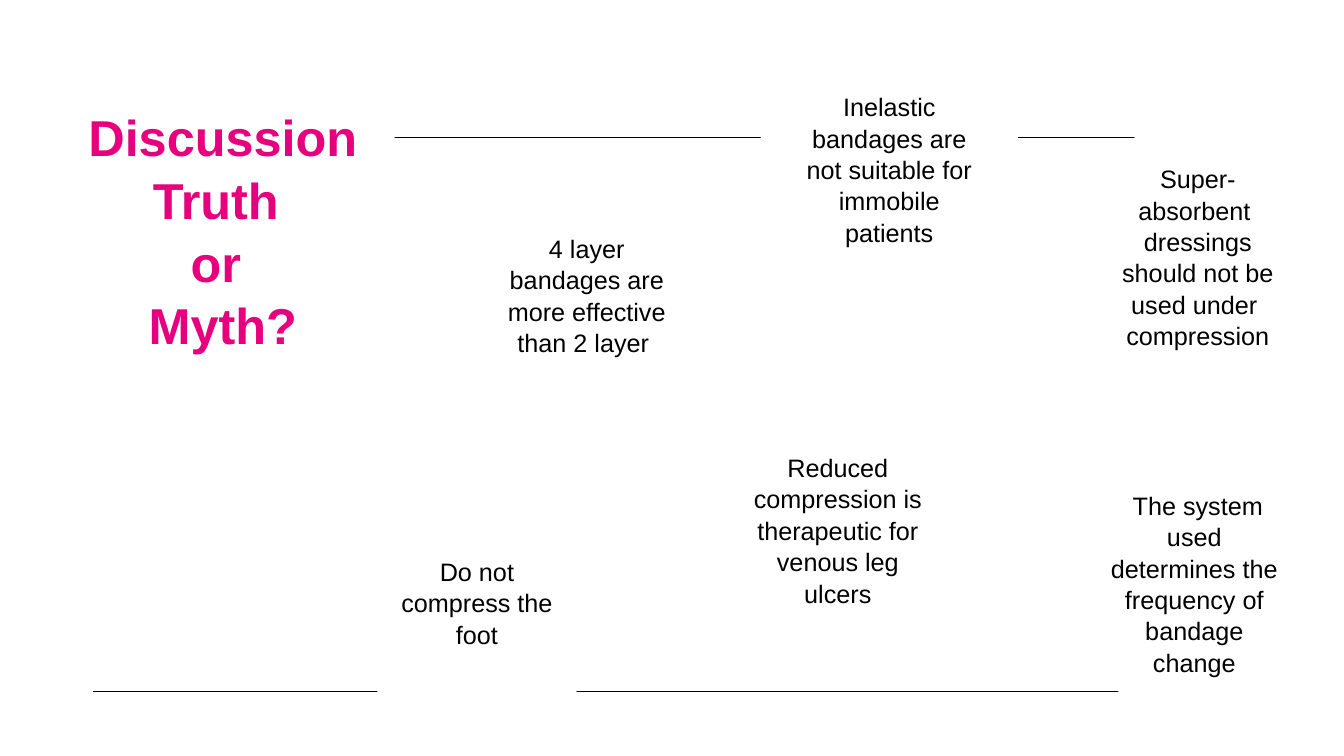
from pptx import Presentation
from pptx.dml.color import RGBColor
from pptx.enum.shapes import MSO_CONNECTOR, MSO_SHAPE
from pptx.enum.text import MSO_ANCHOR, MSO_AUTO_SIZE, PP_ALIGN
from pptx.oxml.ns import qn
from pptx.util import Inches, Pt
from lxml import etree

STRAIGHT = MSO_CONNECTOR.STRAIGHT
OVAL = MSO_SHAPE.OVAL
MIDDLE = MSO_ANCHOR.MIDDLE
CENTER = PP_ALIGN.CENTER
NO_AUTOFIT = MSO_AUTO_SIZE.NONE


def color(hex_string):
    return RGBColor.from_string(hex_string)


class SlideBuilder:
    font = "Arial"
    ink, accent, paper = "000000", "E6007E", "FFFFFF"
    line_spacing = 1.04

    def __init__(self, slide):
        self.slide = slide

    def rule(self, left, right, y):
        connector = self.slide.shapes.add_connector(
            STRAIGHT, Inches(left), Inches(y), Inches(right), Inches(y))
        connector.line.color.rgb = color(self.ink)
        connector.line.width = Pt(0.5)
        etree.SubElement(connector._element.spPr, qn("a:effectLst"))

    def circle(self, left, top, width, height):
        shape = self.slide.shapes.add_shape(
            OVAL, Inches(left), Inches(top), Inches(width), Inches(height))
        shape.shadow.inherit = False
        shape.fill.solid()
        shape.fill.fore_color.rgb = color(self.paper)
        shape.line.fill.background()
        return shape

    def set_text(self, shape, paragraphs, size, hex_string, bold=False):
        """Each paragraph is a list of lines separated by line breaks."""
        frame = shape.text_frame
        frame.word_wrap = True
        frame.auto_size = NO_AUTOFIT
        frame.vertical_anchor = MIDDLE
        frame.margin_left = frame.margin_right = 0
        frame.margin_top = frame.margin_bottom = 0
        for index, lines in enumerate(paragraphs):
            paragraph = frame.add_paragraph() if index else frame.paragraphs[0]
            paragraph.alignment = CENTER
            paragraph.line_spacing = self.line_spacing
            for number, line in enumerate(lines):
                if number:
                    paragraph.add_line_break()
                run = paragraph.add_run()
                run.text = line
                run.font.name = self.font
                run.font.size = Pt(size)
                run.font.bold = bold
                run.font.color.rgb = color(hex_string)

    def title(self, left, top, width, height, paragraphs):
        title = self.slide.shapes.title
        title.left, title.top = Inches(left), Inches(top)
        title.width, title.height = Inches(width), Inches(height)
        # Keep the title in front of its circle
        self.slide.shapes._spTree.append(title._element)
        self.set_text(title, paragraphs, 36, self.accent, bold=True)

    def statement(self, left, top, lines):
        self.set_text(self.circle(left, top, 2.62, 2.69), [lines], 18, self.ink)


def main():
    presentation = Presentation()
    presentation.slide_width = Inches(13.33)
    presentation.slide_height = Inches(7.5)
    builder = SlideBuilder(
        presentation.slides.add_slide(presentation.slide_layouts[5]))

    # Horizontal rules, interrupted by the white circles
    for y in (6.86, 1.36):
        builder.rule(0.92, 12.42, y)

    # Title in the large circle
    builder.circle(0.29, 0.3, 3.84, 3.95)
    builder.title(0.85, 0.88, 2.72, 2.79,
                  [["Discussion Truth "], ["or "], ["Myth?"]])

    # Statements to discuss
    statements = [
        (10.57, 4.44, ["The system used ", "determines the ",
                       "frequency of ", "bandage ", "change "]),
        (10.57, 1.2, ["Super-absorbent ",
                      "dressings should not be used under ",
                      "compression"]),
        (7.51, 0.33, ["Inelastic bandages are not suitable for "
                      "immobile patients"]),
        (7, 3.91, ["Reduced compression is therapeutic for "
                   "venous leg ulcers"]),
        (3.42, 4.63, ["Do not compress the foot"]),
        (4.51, 1.58, ["4 layer bandages are more effective than 2 layer "]),
    ]
    for left, top, lines in statements:
        builder.statement(left, top, lines)

    presentation.save("out.pptx")


if __name__ == "__main__":
    main()
